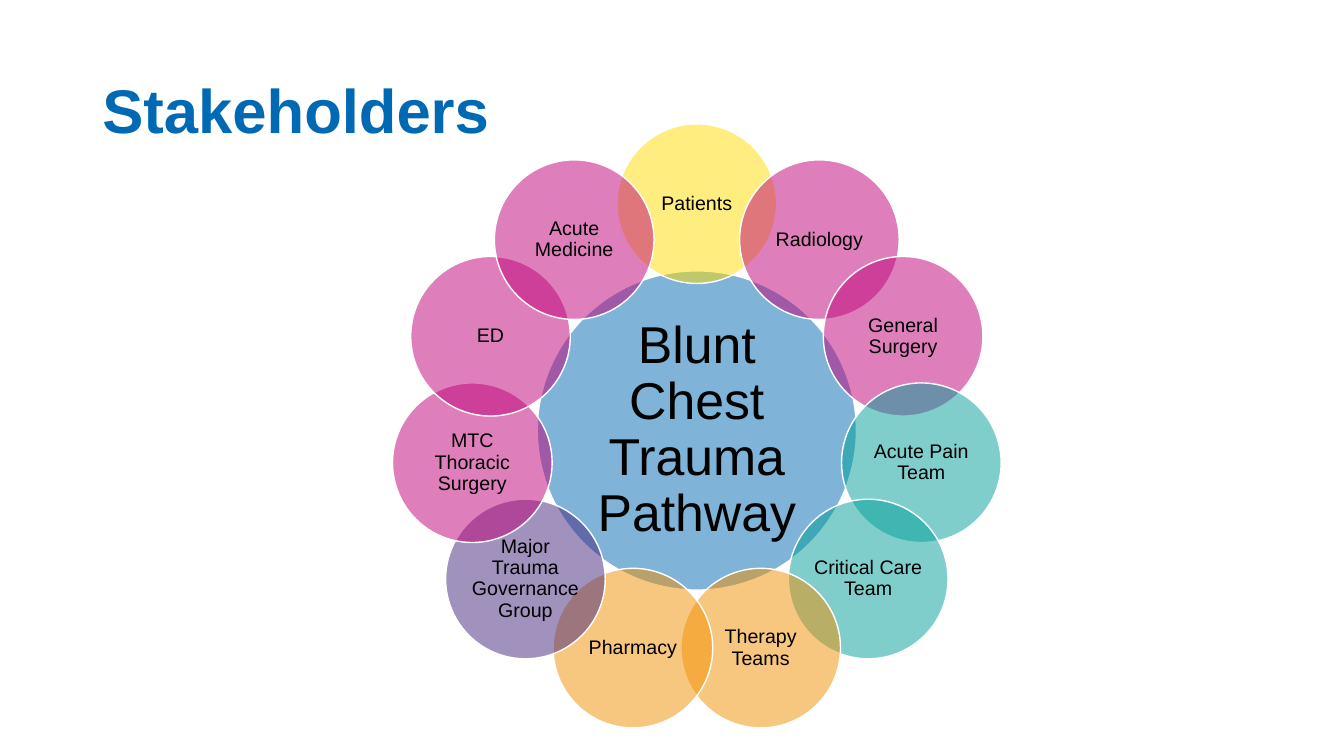
from math import cos, pi, sin

from lxml import etree
from pptx import Presentation
from pptx.dml.color import RGBColor
from pptx.enum.shapes import MSO_SHAPE
from pptx.enum.text import MSO_ANCHOR, MSO_AUTO_SIZE, PP_ALIGN
from pptx.oxml.ns import qn
from pptx.util import Pt

ELLIPSE = MSO_SHAPE.OVAL
MIDDLE = MSO_ANCHOR.MIDDLE
NO_AUTOFIT = MSO_AUTO_SIZE.NONE
LEFT, CENTER = PP_ALIGN.LEFT, PP_ALIGN.CENTER
TITLE_ONLY = 5

COLORS = {
    "blue": "0069B3",
    "yellow": "FFDD00",
    "magenta": "BF0078",
    "teal": "009F98",
    "orange": "F39000",
    "purple": "44247D",
    "white": "FFFFFF",
    "black": "000000",
}

# Clockwise from the top
STAKEHOLDERS = [
    ("Patients", "yellow"),
    ("Radiology", "magenta"),
    ("General Surgery", "magenta"),
    ("Acute Pain Team", "teal"),
    ("Critical Care Team", "teal"),
    ("Therapy Teams", "orange"),
    ("Pharmacy", "orange"),
    ("Major Trauma Governance Group", "purple"),
    ("MTC Thoracic Surgery", "magenta"),
    ("ED", "magenta"),
    ("Acute Medicine", "magenta"),
]

CENTER_X, CENTER_Y = 497.75, 307.5
RING_RADIUS = 162
HUB_DIAMETER, PETAL_DIAMETER = 228, 114


class SlideBuilder:
    font_name = "Arial"
    line_spacing = 0.9
    opacity = 50

    def __init__(self, slide):
        self.slide = slide

    def color(self, name):
        return RGBColor.from_string(COLORS[name])

    def set_text(self, shape, text, size, color, alignment, bold=False):
        frame = shape.text_frame
        frame.text = text
        frame.word_wrap = True
        frame.auto_size = NO_AUTOFIT
        frame.vertical_anchor = MIDDLE
        paragraph = frame.paragraphs[0]
        paragraph.alignment = alignment
        paragraph.line_spacing = self.line_spacing
        font = paragraph.font
        font.name = self.font_name
        font.size = Pt(size)
        font.bold = bold
        font.color.rgb = self.color(color)

    def title(self, text, left, top, width, height):
        shape = self.slide.shapes.title
        shape.left, shape.top = Pt(left), Pt(top)
        shape.width, shape.height = Pt(width), Pt(height)
        self.set_text(shape, text, 44, "blue", LEFT, bold=True)

    def circle(self, text, center_x, center_y, diameter, fill, size, inset):
        """Draw a translucent labelled circle around a centre point."""
        shape = self.slide.shapes.add_shape(
            ELLIPSE, Pt(center_x - diameter / 2), Pt(center_y - diameter / 2),
            Pt(diameter), Pt(diameter))
        shape.shadow.inherit = False
        shape.fill.solid()
        shape.fill.fore_color.rgb = self.color(fill)
        fill_color = shape.element.spPr.find(qn("a:solidFill"))[0]
        etree.SubElement(fill_color, qn("a:alpha"), val=str(self.opacity * 1000))
        shape.line.color.rgb = self.color("white")
        shape.line.width = Pt(1)
        frame = shape.text_frame
        frame.margin_left = frame.margin_right = Pt(inset)
        frame.margin_top = frame.margin_bottom = Pt(inset)
        self.set_text(shape, text, size, "black", CENTER)


def main():
    presentation = Presentation()
    presentation.slide_width, presentation.slide_height = Pt(960), Pt(540)
    slide = presentation.slides.add_slide(presentation.slide_layouts[TITLE_ONLY])
    builder = SlideBuilder(slide)

    builder.title("Stakeholders", 66, 28.75, 828, 104.4)
    builder.circle("Blunt Chest Trauma Pathway", CENTER_X, CENTER_Y,
                   HUB_DIAMETER, "blue", size=37, inset=3.7)
    for index, (name, fill) in enumerate(STAKEHOLDERS):
        angle = 2 * pi * index / len(STAKEHOLDERS)
        builder.circle(name, CENTER_X + RING_RADIUS * sin(angle),
                       CENTER_Y - RING_RADIUS * cos(angle),
                       PETAL_DIAMETER, fill, size=14, inset=1.4)

    presentation.save("out.pptx")


if __name__ == "__main__":
    main()
